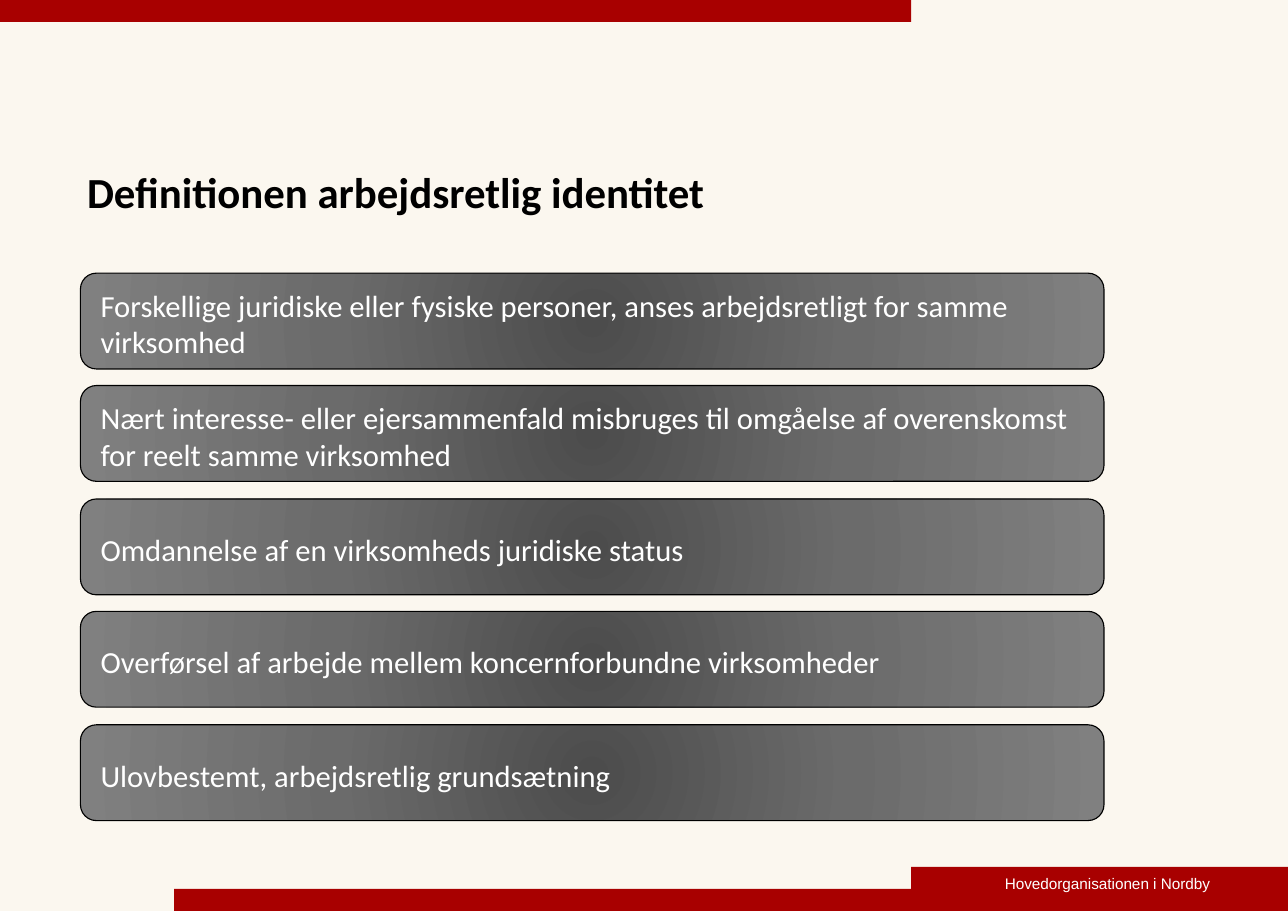
from lxml import etree
from pptx import Presentation
from pptx.dml.color import RGBColor
from pptx.enum.shapes import MSO_SHAPE
from pptx.enum.text import MSO_ANCHOR
from pptx.oxml.ns import qn
from pptx.util import Emu, Pt

RECT, ROUNDED = MSO_SHAPE.RECTANGLE, MSO_SHAPE.ROUNDED_RECTANGLE
TOP, MIDDLE, BOTTOM = MSO_ANCHOR.TOP, MSO_ANCHOR.MIDDLE, MSO_ANCHOR.BOTTOM

PX = 9144  # EMU per px, 100 px to the inch
PAGE_WIDTH, PAGE_HEIGHT = 1169, 827

CREAM = RGBColor(0xFB, 0xF7, 0xEF)
RED = RGBColor(0xA8, 0x00, 0x00)
BLACK = RGBColor(0x00, 0x00, 0x00)
WHITE = RGBColor(0xFF, 0xFF, 0xFF)
DARK_GREY = RGBColor(0x4C, 0x4C, 0x4C)
MID_GREY = RGBColor(0x6B, 0x6B, 0x6B)
LIGHT_GREY = RGBColor(0x80, 0x80, 0x80)

RED_BARS = [(0, 0, 827, 20), (158, 807, 1011, 20), (827, 787, 342, 40)]

CARD_LEFT, CARD_TOP, CARD_WIDTH, CARD_HEIGHT = 73, 248, 929, 87
LAST_CARD_TOP = 658
CARD_INSETS = (14, 4, 21, 0)
CARD_TEXTS = [
    "Forskellige juridiske eller fysiske personer, anses arbejdsretligt for samme virksomhed",
    "Nært interesse- eller ejersammenfald misbruges til omgåelse af overenskomst "
    "for reelt samme virksomhed",
    "Omdannelse af en virksomheds juridiske status",
    "Overførsel af arbejde mellem koncernforbundne virksomheder",
    "Ulovbestemt, arbejdsretlig grundsætning",
]


def px(*lengths):
    return [Emu(length * PX) for length in lengths]


def write_text(shape, text, *, size, color, font="Calibri", bold=False,
               anchor=TOP, insets=(0, 0, 0, 0)):
    frame = shape.text_frame
    frame.word_wrap = True
    frame.vertical_anchor = anchor
    (frame.margin_left, frame.margin_top,
     frame.margin_right, frame.margin_bottom) = px(*insets)
    para = frame.paragraphs[0]
    para.alignment = 1  # left
    span = para.add_run()
    span.text = text
    span.font.name = font
    span.font.size = Pt(size)
    span.font.bold = bold
    span.font.color.rgb = color


def add_text(page, box, text, **style):
    write_text(page.shapes.add_textbox(*px(*box)), text, **style)


def add_bar(page, box):
    bar = page.shapes.add_shape(RECT, *px(*box))
    bar.shadow.inherit = False
    bar.fill.solid()
    bar.fill.fore_color.rgb = RED
    bar.line.fill.background()


def fill_radial(shape, colors):
    """Spread the colours evenly from the centre of the shape outwards."""
    shape.fill.background()
    no_fill = shape._element.spPr.find(qn("a:noFill"))
    gradient = etree.Element(qn("a:gradFill"), rotWithShape="1")
    stops = etree.SubElement(gradient, qn("a:gsLst"))
    for index, color in enumerate(colors):
        position = 100000 * index // (len(colors) - 1)
        stop = etree.SubElement(stops, qn("a:gs"), pos=str(position))
        etree.SubElement(stop, qn("a:srgbClr"), val=str(color))
    circle = etree.SubElement(gradient, qn("a:path"))
    circle.set("path", "circle")
    etree.SubElement(circle, qn("a:fillToRect"),
                     {side: "50000" for side in "ltrb"})
    shape._element.spPr.replace(no_fill, gradient)


def add_card(page, top, text):
    card = page.shapes.add_shape(
        ROUNDED, *px(CARD_LEFT, top, CARD_WIDTH, CARD_HEIGHT))
    card.shadow.inherit = False
    fill_radial(card, (DARK_GREY, MID_GREY, LIGHT_GREY))
    card.line.color.rgb = BLACK
    card.line.width = Pt(0.75)
    write_text(card, text, size=20, color=WHITE, anchor=MIDDLE,
               insets=CARD_INSETS)


def main():
    deck = Presentation()
    deck.slide_width, deck.slide_height = px(PAGE_WIDTH, PAGE_HEIGHT)
    page = deck.slides.add_slide(deck.slide_layouts[6])

    # Background, red bars and sender
    page.background.fill.solid()
    page.background.fill.fore_color.rgb = CREAM
    for box in RED_BARS:
        add_bar(page, box)
    add_text(page, (912, 794, 215, 17), "Hovedorganisationen i Nordby",
             size=10, color=WHITE, font="Arial")

    # Title
    add_text(page, (79, 118, 1023, 79), "Definitionen arbejdsretlig identitet",
             size=28, color=BLACK, bold=True, anchor=BOTTOM)

    # Cards, evenly spaced from the first top to the last
    for row, text in enumerate(CARD_TEXTS):
        offset = (LAST_CARD_TOP - CARD_TOP) * row // (len(CARD_TEXTS) - 1)
        add_card(page, CARD_TOP + offset, text)

    deck.save("out.pptx")


if __name__ == "__main__":
    main()
